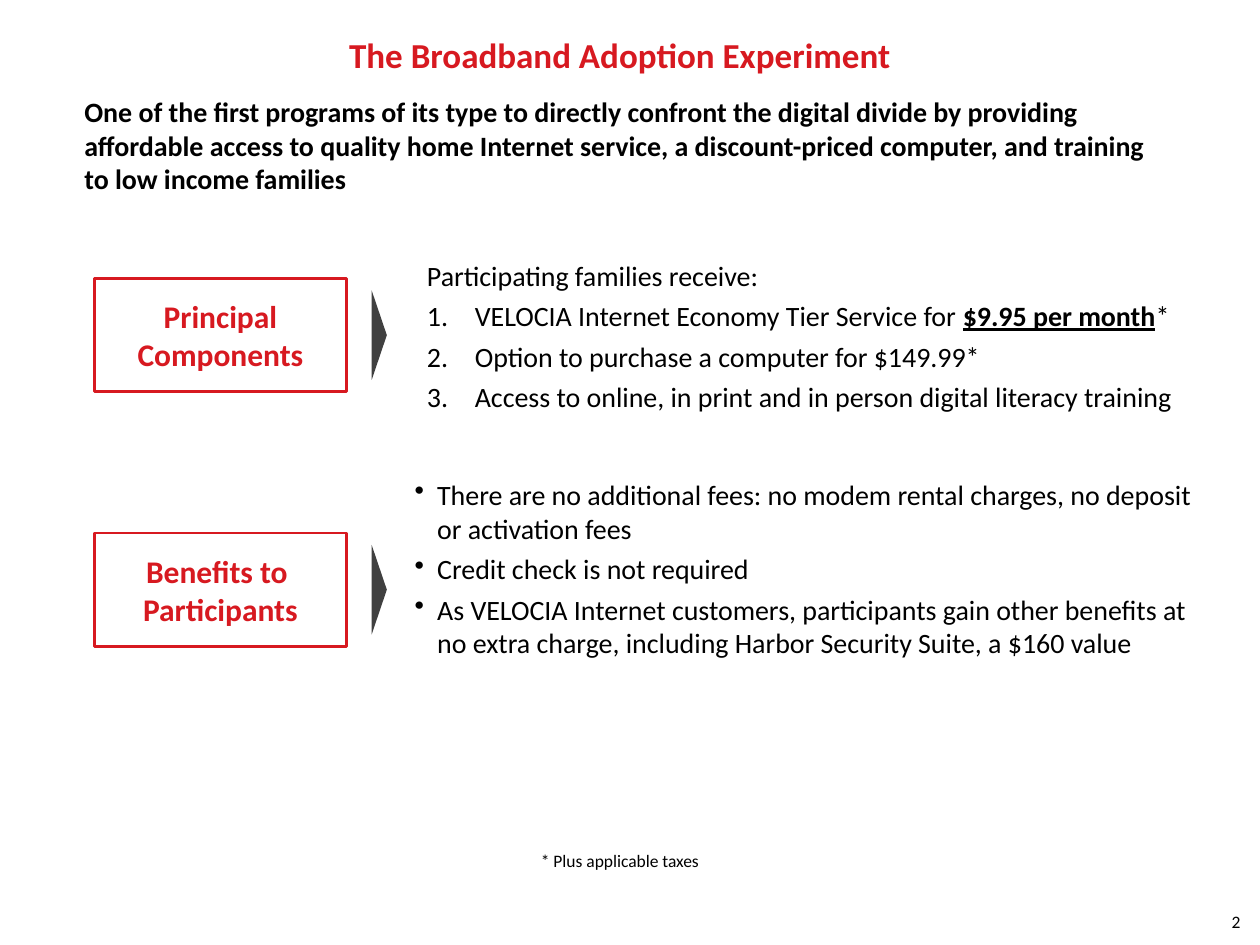
from lxml import etree
from pptx import Presentation
from pptx.dml.color import RGBColor
from pptx.enum.shapes import MSO_SHAPE
from pptx.enum.text import MSO_ANCHOR, PP_ALIGN
from pptx.oxml.ns import qn
from pptx.util import Inches, Pt

RED = RGBColor(0xD7, 0x19, 0x20)
BLACK = RGBColor(0x00, 0x00, 0x00)
GRAY = RGBColor(0x40, 0x40, 0x40)
FONT = "Calibri"
LEFT, CENTER = PP_ALIGN.LEFT, PP_ALIGN.CENTER
TOP, MIDDLE = MSO_ANCHOR.TOP, MSO_ANCHOR.MIDDLE
RECTANGLE, TRIANGLE = MSO_SHAPE.RECTANGLE, MSO_SHAPE.ISOSCELES_TRIANGLE

NUMBER = ("a:buAutoNum", {"type": "arabicPeriod"}, 0.38)
BULLET = ("a:buChar", {"char": "•"}, 0.18)

COMPONENTS = [
    ["VELOCIA Internet Economy Tier Service for ", ("$9.95 per month",), "*"],
    "Option to purchase a computer for $149.99*",
    "Access to online, in print and in person digital literacy training",
]
BENEFITS = [
    "There are no additional fees: no modem rental charges, no deposit or activation fees",
    "Credit check is not required",
    "As VELOCIA Internet customers, participants gain other benefits at no extra charge, "
    "including Harbor Security Suite, a $160 value",
]


def set_marker(paragraph, marker):
    tag, attributes, indent = marker
    properties = paragraph._p.get_or_add_pPr()
    properties.set("marL", str(Inches(indent)))
    properties.set("indent", str(-Inches(indent)))
    etree.SubElement(properties, qn(tag), attributes)


def write_text(frame, lines, size=16, color=BLACK, bold=False, align=LEFT,
               anchor=TOP, before=0, marker=None, unmarked=0):
    """Write one paragraph per line; a tuple inside a line is bold and underlined.

    The first `unmarked` lines carry no marker.
    """
    frame.word_wrap = True
    frame.vertical_anchor = anchor
    for index, line in enumerate(lines):
        paragraph = frame.add_paragraph() if index else frame.paragraphs[0]
        paragraph.alignment = align
        paragraph.space_before = Pt(before)
        if marker and index >= unmarked:
            set_marker(paragraph, marker)
        for part in [line] if isinstance(line, str) else line:
            stressed = isinstance(part, tuple)
            run = paragraph.add_run()
            run.text = part[0] if stressed else part
            run.font.name = FONT
            run.font.size = Pt(size)
            run.font.color.rgb = color
            run.font.bold = bold or stressed
            if stressed:
                run.font.underline = True


def add_text(slide, left, top, width, height, lines, inset=True, **text_format):
    box = slide.shapes.add_textbox(Inches(left), Inches(top), Inches(width), Inches(height))
    frame = box.text_frame
    if not inset:
        frame.margin_left = frame.margin_right = frame.margin_top = frame.margin_bottom = 0
    write_text(frame, lines, **text_format)


def add_label_box(slide, top, lines):
    box = slide.shapes.add_shape(RECTANGLE, Inches(0.75), Inches(top), Inches(2), Inches(0.9))
    box.shadow.inherit = False
    box.fill.background()
    box.line.color.rgb = RED
    box.line.width = Pt(1.5)
    write_text(box.text_frame, lines, size=18, color=RED, bold=True,
               align=CENTER, anchor=MIDDLE)


def add_pointer(slide, center_y):
    """Add a slim triangle that points right, from a label to its text."""
    length, thickness, center_x = 0.71, 0.12, 3.01
    pointer = slide.shapes.add_shape(
        TRIANGLE, Inches(center_x - length / 2), Inches(center_y - thickness / 2),
        Inches(length), Inches(thickness))
    pointer.rotation = 90
    pointer.shadow.inherit = False
    pointer.fill.solid()
    pointer.fill.fore_color.rgb = GRAY
    pointer.line.fill.background()


def main():
    presentation = Presentation()
    presentation.slide_width = Inches(10)
    presentation.slide_height = Inches(7.5)
    slide = presentation.slides.add_slide(presentation.slide_layouts[6])

    add_text(slide, 0.67, 0.21, 8.5, 0.45, ["The Broadband Adoption Experiment"],
             size=20, color=RED, bold=True, align=CENTER, anchor=MIDDLE)
    add_text(slide, 0.67, 0.75, 8.5, 0.58,
             ["One of the first programs of its type to directly confront the digital divide "
              "by providing affordable access to quality home Internet service, "
              "a discount-priced computer, and training to low income families"],
             inset=False, bold=True, before=4)

    for top, label in ((2.21, ["Principal", "Components"]),
                       (4.23, ["Benefits to ", "Participants"])):
        add_label_box(slide, top, label)
        add_pointer(slide, top + 0.45)

    add_text(slide, 3.29, 2, 6.21, 1.3, ["Participating families receive:"] + COMPONENTS,
             before=4, marker=NUMBER, unmarked=1)
    add_text(slide, 3.29, 3.79, 6.36, 1.78, BENEFITS, inset=False, before=4, marker=BULLET)

    add_text(slide, 0.67, 6.75, 8.5, 0.33, ["* Plus applicable taxes"],
             inset=False, size=10, align=CENTER, before=2)
    add_text(slide, 9.65, 7.23, 0.32, 0.25, ["2"], inset=False, size=10, align=CENTER)

    presentation.save("out.pptx")


if __name__ == "__main__":
    main()
